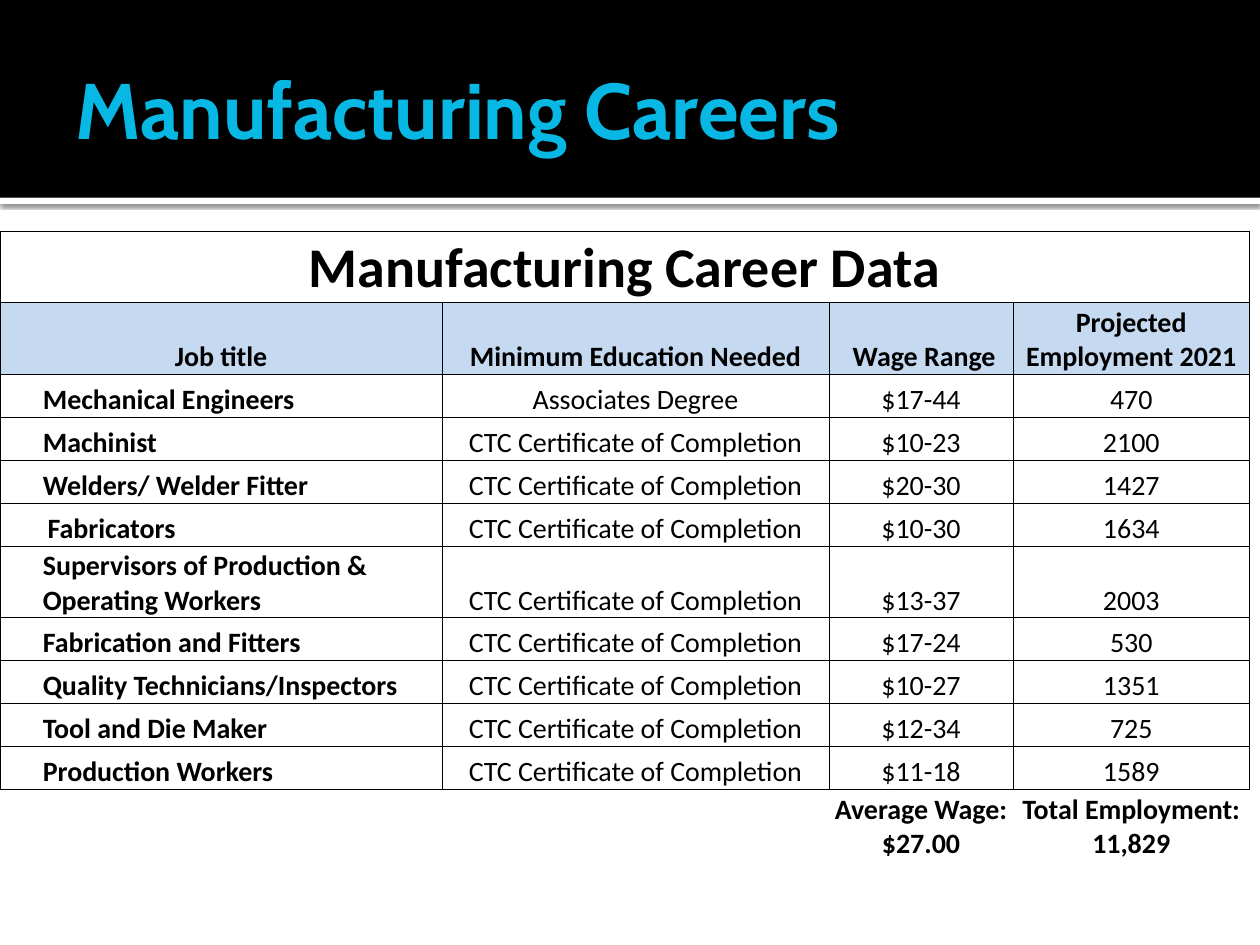
from lxml import etree
from pptx import Presentation
from pptx.dml.color import RGBColor
from pptx.enum import shapes, text
from pptx.oxml import parse_xml
from pptx.oxml.ns import nsdecls, qn
from pptx.util import Pt

BLACK = RGBColor(0x00, 0x00, 0x00)
WHITE = RGBColor(0xFF, 0xFF, 0xFF)
TITLE_BLUE = RGBColor(0x08, 0xB8, 0xE4)
HEADER_BLUE = RGBColor(0xC5, 0xD9, 0xF1)

BODY_FONT = "Calibri"
NO_STYLE = "{2D5ABB26-0587-4C30-8999-92F81FD0307C}"
ALL_SIDES = ("L", "R", "T", "B")
COLUMN_WIDTHS = (252.7, 221, 105.3, 135)
TALL_ROW, SHORT_ROW = 41, 24.5

CERTIFICATE = "CTC Certificate of Completion"
HEADERS = ("Job title", "Minimum Education Needed", " Wage Range",
           "Projected Employment 2021")
CAREERS = (
    ("Mechanical Engineers", "Associates Degree", "$17-44", "470"),
    ("Machinist", CERTIFICATE, "$10-23", "2100"),
    ("Welders/ Welder Fitter", CERTIFICATE, "$20-30", "1427"),
    (" Fabricators", CERTIFICATE, "$10-30", "1634"),
    ("Supervisors of Production & Operating Workers", CERTIFICATE, "$13-37", "2003"),
    ("Fabrication and Fitters", CERTIFICATE, "$17-24", "530"),
    ("Quality Technicians/Inspectors", CERTIFICATE, "$10-27", "1351"),
    ("Tool and Die Maker", CERTIFICATE, "$12-34", "725"),
    ("Production Workers", CERTIFICATE, "$11-18", "1589"),
)
TOTALS = ("", "", "Average Wage: $27.00", "Total Employment: 11,829")
ROWS = (("Manufacturing Career Data", "", "", ""), HEADERS, *CAREERS, TOTALS)
TALL_ROWS = {0, 1, 6, len(ROWS) - 1}


def add_band(slide, left, top, width, height, color):
    """Add a plain rectangle behind the title."""
    band = slide.shapes.add_shape(shapes.MSO_SHAPE.RECTANGLE,
                                  Pt(left), Pt(top), Pt(width), Pt(height))
    band.shadow.inherit = False
    band.fill.solid()
    band.fill.fore_color.rgb = color
    band.line.fill.background()
    slide.shapes.title.element.addprevious(band.element)
    return band


def add_soft_shadow(shape):
    effects = shape.element.spPr.find(qn("a:effectLst"))
    effects.append(parse_xml(
        f'<a:outerShdw {nsdecls("a")} blurRad="{Pt(2.5)}" dist="{Pt(0.8)}" '
        'dir="5400000" algn="tl" rotWithShape="0">'
        f'<a:srgbClr val="{BLACK}"><a:alpha val="60000"/></a:srgbClr></a:outerShdw>'))


def build_header(slide, left, top, width, height):
    rule = add_band(slide, left, top + height, width, 3.6, WHITE)
    add_soft_shadow(rule)
    add_band(slide, left, top, width, height, BLACK)

    title = slide.shapes.title
    title.left, title.top = Pt(left + 36), Pt(top + 12.2)
    title.width, title.height = Pt(width - 72), Pt(98.6)
    frame = title.text_frame
    frame.text = "Manufacturing Careers"
    frame.auto_size = text.MSO_AUTO_SIZE.NONE
    frame.vertical_anchor = text.MSO_ANCHOR.MIDDLE
    frame.margin_left = Pt(7.2)
    frame.margin_right = frame.margin_top = frame.margin_bottom = Pt(3.6)
    paragraph = frame.paragraphs[0]
    paragraph.alignment = text.PP_ALIGN.LEFT
    font = paragraph.runs[0].font
    font.name, font.size, font.bold = "Cabin", Pt(45), True
    font.color.rgb = TITLE_BLUE


def set_borders(cell, sides):
    properties = cell._tc.get_or_add_tcPr()
    for side in sides:
        line = etree.SubElement(properties, qn(f"a:ln{side}"), w=str(Pt(0.5)))
        fill = etree.SubElement(line, qn("a:solidFill"))
        etree.SubElement(fill, qn("a:srgbClr"), val=str(BLACK))


def format_run(run, size, bold, name=BODY_FONT):
    font = run.font
    font.name, font.size, font.bold = name, Pt(size), bold
    font.color.rgb = BLACK


def fill_cell(cell, content, size, bold, is_job):
    cell.vertical_anchor = text.MSO_ANCHOR.BOTTOM
    cell.margin_left = Pt(24.5 if is_job else 0.7)
    cell.margin_right = cell.margin_top = Pt(0.7)
    cell.margin_bottom = 0
    paragraph = cell.text_frame.paragraphs[0]
    paragraph.alignment = text.PP_ALIGN.LEFT if is_job else text.PP_ALIGN.CENTER
    paragraph.font.size = Pt(size)
    if is_job and content.startswith(" "):
        space = paragraph.add_run()
        space.text = " "
        format_run(space, 11, bold, "Times New Roman")
        content = content.lstrip()
    if content:
        run = paragraph.add_run()
        run.text = content
        format_run(run, size, bold)


def build_career_table(slide, left, top):
    heights = [TALL_ROW if row in TALL_ROWS else SHORT_ROW for row in range(len(ROWS))]
    frame = slide.shapes.add_table(len(ROWS), len(COLUMN_WIDTHS), Pt(left), Pt(top),
                                   Pt(sum(COLUMN_WIDTHS)), Pt(sum(heights)))
    table = frame.table
    table.first_row = table.horz_banding = False
    table._tbl.tblPr.find(qn("a:tableStyleId")).text = NO_STYLE
    for column, width in zip(table.columns, COLUMN_WIDTHS):
        column.width = Pt(width)
    for row, height in zip(table.rows, heights):
        row.height = Pt(height)
    table.cell(0, 0).merge(table.cell(0, len(COLUMN_WIDTHS) - 1))

    last = len(ROWS) - 1
    for row, values in enumerate(ROWS):
        for column, content in enumerate(values):
            cell = table.cell(row, column)
            in_body = 1 < row < last
            is_job = in_body and column == 0
            set_borders(cell, "T" if row == last else ALL_SIDES)
            if row == 1:
                cell.fill.solid()
                cell.fill.fore_color.rgb = HEADER_BLUE
            else:
                cell.fill.background()
            fill_cell(cell, content, 32 if row == 0 else 16,
                      is_job or not in_body, is_job)


def main():
    presentation = Presentation()
    presentation.slide_width, presentation.slide_height = Pt(720), Pt(540)
    slide = presentation.slides.add_slide(presentation.slide_layouts[5])
    build_header(slide, 0, 0, 720, 113)
    build_career_table(slide, 0, 132)
    presentation.save("out.pptx")


if __name__ == "__main__":
    main()
